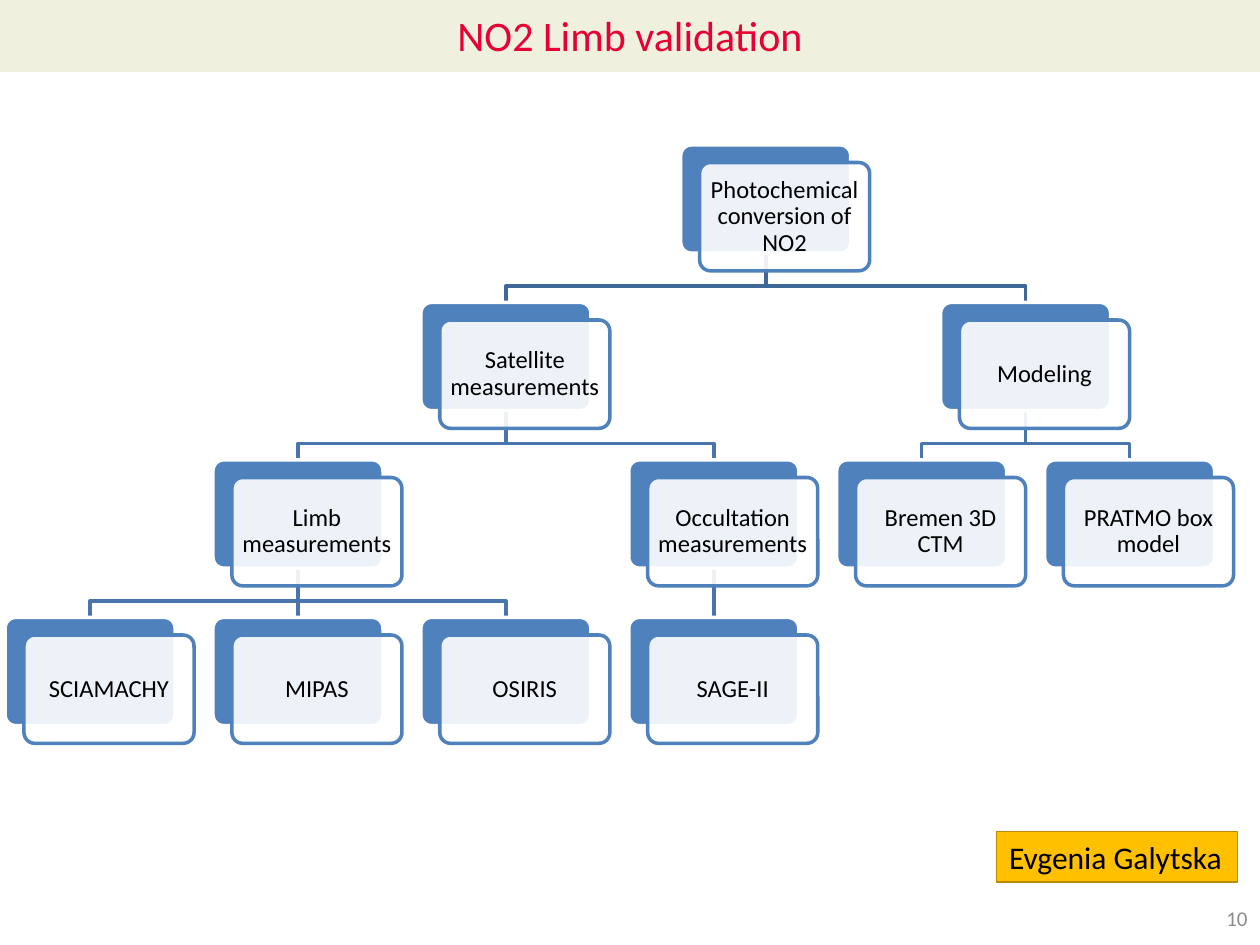
from lxml import etree
from pptx import Presentation
from pptx.dml.color import RGBColor
from pptx.enum.shapes import MSO_CONNECTOR, MSO_SHAPE
from pptx.enum.text import MSO_ANCHOR, PP_ALIGN
from pptx.oxml.ns import qn
from pptx.util import Inches, Pt

STRAIGHT = MSO_CONNECTOR.STRAIGHT
RECTANGLE, ROUNDED = MSO_SHAPE.RECTANGLE, MSO_SHAPE.ROUNDED_RECTANGLE
MIDDLE, TOP = MSO_ANCHOR.MIDDLE, MSO_ANCHOR.TOP
CENTER, LEFT, RIGHT = PP_ALIGN.CENTER, PP_ALIGN.LEFT, PP_ALIGN.RIGHT

FONT = "Calibri"
COLORS = {
    "white": "FFFFFF", "black": "000000", "box": "4F81BD",
    "branch_top": "3F6797", "branch": "4875AC", "band": "F0F0DE",
    "title": "E60033", "number": "8C8C8C", "author": "FFC000", "author_line": "BC8A0C",
}

TITLE = "NO2 Limb validation"
AUTHOR = "Evgenia Galytska"
SLIDE_NUMBER = "10"
TREE = ("Photochemical conversion of NO2", [
    ("Satellite measurements", [
        ("Limb measurements", [("SCIAMACHY", []), ("MIPAS", []), ("OSIRIS", [])]),
        ("Occultation measurements", [("SAGE-II", [])]),
    ]),
    ("Modeling", [("Bremen 3D CTM", []), ("PRATMO box model", [])]),
])

TREE_LEFT, TREE_TOP = 0.04, 1.15
COLUMN_STEP, ROW_STEP = 1.65, 1.25
BOX_WIDTH, BOX_HEIGHT = 1.35, 0.86
FRONT_RIGHT, FRONT_DOWN = 0.15, 0.14
BOX_INSET = 0.04
BEND = 0.26


def color(name):
    return RGBColor.from_string(COLORS[name])


def place(shape, left, top, width, height):
    geometry = {"left": left, "top": top, "width": width, "height": height}
    for name, value in geometry.items():
        setattr(shape, name, Inches(value))


def paint(shape, fill, line=None, width=2):
    shape.fill.solid()
    shape.fill.fore_color.rgb = color(fill)
    if line:
        shape.line.color.rgb = color(line)
        shape.line.width = Pt(width)
    else:
        shape.line.fill.background()


def write(shape, text, size, ink, align, anchor=MIDDLE, wrap=True, inset=None, spacing=None):
    frame = shape.text_frame
    frame.text = text
    frame_format = {"word_wrap": wrap, "vertical_anchor": anchor}
    if inset is not None:
        sides = ("left", "top", "right", "bottom")
        frame_format.update({f"margin_{side}": Inches(inset) for side in sides})
    for name, value in frame_format.items():
        setattr(frame, name, value)
    paragraph = frame.paragraphs[0]
    paragraph.alignment = align
    paragraph.line_spacing = spacing
    font = paragraph.runs[0].font
    for name, value in {"name": FONT, "size": Pt(size), "bold": False}.items():
        setattr(font, name, value)
    font.color.rgb = color(ink)


def add_panel(slide, preset, left, top, width, height):
    shape = slide.shapes.add_shape(preset, *map(Inches, (left, top, width, height)))
    shape.shadow.inherit = False
    return shape


def lay_out(node, level, first_column, boxes, links):
    label, children = node
    columns, next_column = [], first_column
    for child in children:
        column, next_column = lay_out(child, level + 1, next_column, boxes, links)
        columns.append(column)
    if not children:
        column, next_column = first_column, first_column + 1
    else:
        column = (columns[0] + columns[-1]) / 2
    boxes.append((label, column, level))
    links.extend((column, child_column, level) for child_column in columns)
    return column, next_column


def add_link(slide, parent_column, child_column, level):
    start, end = (TREE_LEFT + BOX_WIDTH / 2 + column * COLUMN_STEP
                  for column in (parent_column, child_column))
    top = TREE_TOP + level * ROW_STEP + BOX_HEIGHT
    bottom = TREE_TOP + (level + 1) * ROW_STEP
    if start == end:
        link = slide.shapes.add_connector(STRAIGHT, *map(Inches, (start, top, end, bottom)))
        etree.SubElement(link._element.spPr, qn("a:effectLst"))
    else:
        builder = slide.shapes.build_freeform(Inches(start), Inches(top))
        corners = [(start, top + BEND), (end, top + BEND), (end, bottom)]
        builder.add_line_segments([(Inches(x), Inches(y)) for x, y in corners], close=False)
        link = builder.convert_to_shape()
        link.shadow.inherit = False
        link.fill.background()
    link.line.color.rgb = color("branch" if level else "branch_top")
    link.line.width = Pt(2)


def add_box(slide, label, column, level):
    left = TREE_LEFT + column * COLUMN_STEP
    top = TREE_TOP + level * ROW_STEP
    layers = ((0, 0, "box", "white"), (FRONT_RIGHT, FRONT_DOWN, "white", "box"))
    for right, down, fill, line in layers:
        panel = add_panel(slide, ROUNDED, left + right, top + down, BOX_WIDTH, BOX_HEIGHT)
        panel.adjustments[0] = 0.1
        paint(panel, fill, line)
    fill_color = panel._element.spPr.find(qn("a:solidFill"))[0]
    etree.SubElement(fill_color, qn("a:alpha"), val="90000")
    write(panel, label, 14, "black", CENTER, inset=BOX_INSET, spacing=0.9)


def main():
    presentation = Presentation()
    presentation.slide_width, presentation.slide_height = Inches(10), Inches(7.5)
    slide = presentation.slides.add_slide(presentation.slide_layouts[5])

    title = slide.shapes.title
    place(title, 0, -0.02, 10, 0.59)
    paint(title, "band")
    write(title, TITLE, 24, "title", CENTER)

    boxes, links = [], []
    lay_out(TREE, 0, 0, boxes, links)
    for link in links:
        add_link(slide, *link)
    for box in boxes:
        add_box(slide, *box)

    number = slide.shapes.add_textbox(*map(Inches, (9.25, 7.09, 0.75, 0.4)))
    write(number, SLIDE_NUMBER, 12, "number", RIGHT)

    author = add_panel(slide, RECTANGLE, 7.91, 6.6, 1.91, 0.4)
    paint(author, "author", "author_line", 0.75)
    write(author, AUTHOR, 18, "black", LEFT, anchor=TOP, wrap=False)

    presentation.save("out.pptx")


if __name__ == "__main__":
    main()
